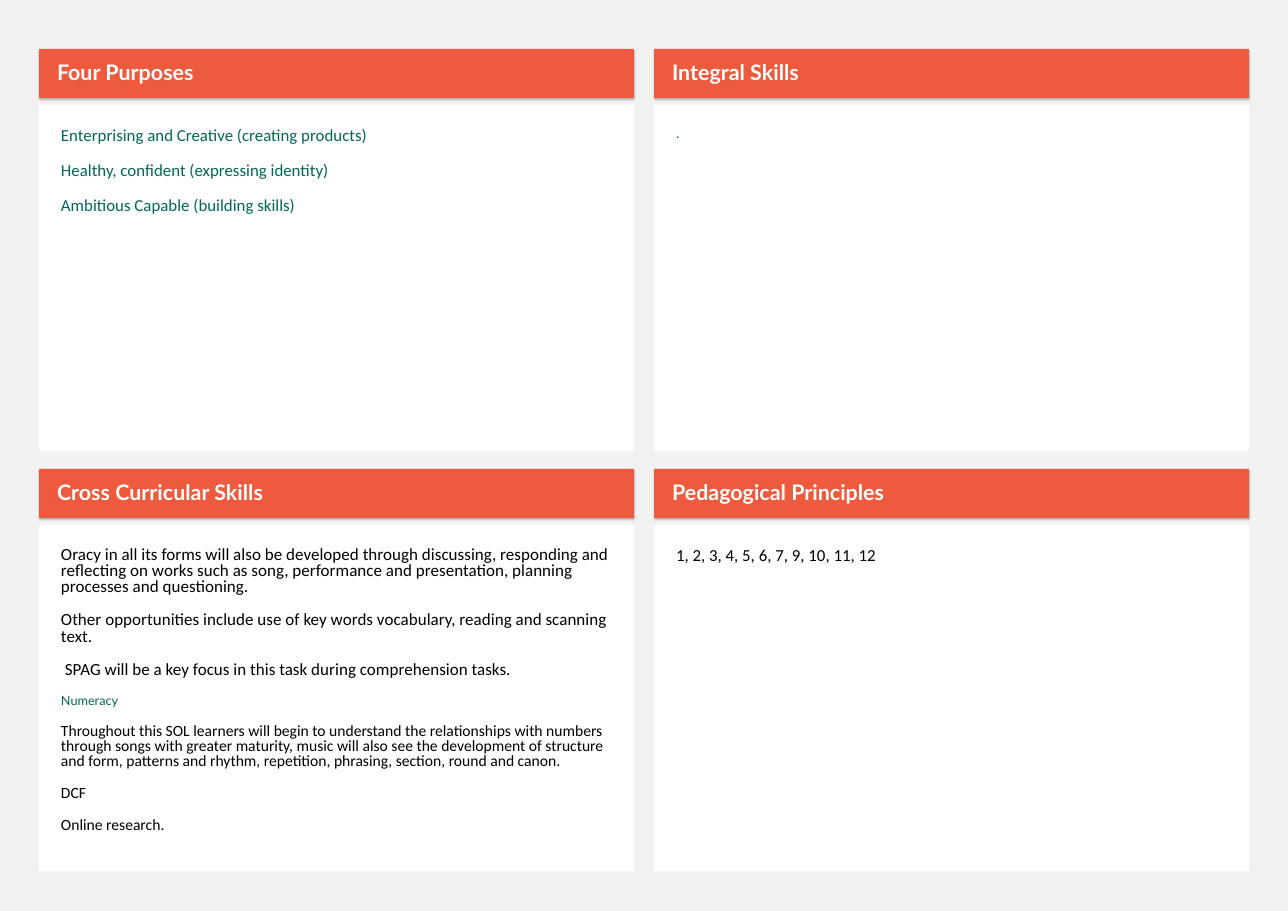
import lxml.etree
import pptx
import pptx.dml.color
import pptx.enum.shapes
import pptx.enum.text
import pptx.oxml
import pptx.oxml.ns
import pptx.util

RGBColor = pptx.dml.color.RGBColor
GREY = RGBColor(0xF2, 0xF2, 0xF2)
ORANGE = RGBColor(0xED, 0x5A, 0x3E)
WHITE = RGBColor(0xFF, 0xFF, 0xFF)
GREEN = RGBColor(0x00, 0x67, 0x58)
BLACK = RGBColor(0x00, 0x00, 0x00)

# Text styles: font, size, colour, bold
HEADING = ("Lato", 14, WHITE, True)
PURPOSE = ("Calibri", 11, GREEN, False)
DOT = ("Lato", 9, GREEN, False)
ORACY = ("Calibri", 11.1, BLACK, False)
SUBJECT = ("Lato", 8.3, GREEN, False)
NUMERACY = ("Calibri", 10.2, BLACK, False)
PRINCIPLE = ("Calibri", 11, BLACK, False)

# Panels, row by row: heading, line spacing, paragraphs
PANELS = [
    ("Four Purposes", 0.9, [
        ("Enterprising and Creative (creating products)", PURPOSE),
        ("Healthy, confident (expressing identity)", PURPOSE),
        ("Ambitious Capable (building skills)", PURPOSE),
    ]),
    ("Integral Skills", 0.9, [(".", DOT)]),
    ("Cross Curricular Skills", 0.8, [
        ("Oracy in all its forms will also be developed through discussing, "
         "responding and reflecting on works such as song, performance and "
         "presentation, planning processes and questioning.", ORACY),
        ("Other opportunities include use of key words vocabulary, reading "
         "and scanning text.", ORACY),
        (" SPAG will be a key focus in this task during comprehension tasks.", ORACY),
        ("Numeracy", SUBJECT),
        ("Throughout this SOL learners will begin to understand the "
         "relationships with numbers through songs with greater maturity, "
         "music will also see the development of structure and form, patterns "
         "and rhythm, repetition, phrasing, section, round and canon.", NUMERACY),
        ("DCF", NUMERACY),
        ("Online research.", NUMERACY),
    ]),
    ("Pedagogical Principles", 0.9, [
        ("1, 2, 3, 4, 5, 6, 7, 9, 10, 11, 12", PRINCIPLE),
    ]),
]

# Layout in px
EMU_PER_PX = 8298
SLIDE_WIDTH, SLIDE_HEIGHT = 1288, 911
LEFT, TOP = 39, 49
COLUMN_STEP, ROW_STEP = 615, 420
PANEL_WIDTH, HEADING_HEIGHT = 595, 49
BODY_OFFSET, BODY_HEIGHT = 56, 346
HEADING_INSETS = (18, 6, 11, 6)
BODY_INSETS = (22, 22, 22, 22)


def px(length):
    return pptx.util.Emu(length * EMU_PER_PX)


def add_block(slide, box, fill, insets, anchor, line_spacing, paragraphs):
    shape = slide.shapes.add_shape(
        pptx.enum.shapes.MSO_SHAPE.RECTANGLE, *map(px, box))
    shape.shadow.inherit = False
    shape.fill.solid()
    shape.fill.fore_color.rgb = fill
    shape.line.fill.background()
    frame = shape.text_frame
    frame.word_wrap = True
    frame.vertical_anchor = anchor
    (frame.margin_left, frame.margin_top,
     frame.margin_right, frame.margin_bottom) = map(px, insets)
    for index, (text, (font, size, color, bold)) in enumerate(paragraphs):
        paragraph = frame.add_paragraph() if index else frame.paragraphs[0]
        paragraph.text = text
        paragraph.alignment = pptx.enum.text.PP_ALIGN.LEFT
        paragraph.line_spacing = line_spacing
        paragraph.space_before = pptx.util.Pt(11)
        paragraph.font.name = font
        paragraph.font.size = pptx.util.Pt(size)
        paragraph.font.color.rgb = color
        paragraph.font.bold = bold
    return shape


def add_soft_shadow(shape):
    effects = shape.element.spPr.find(pptx.oxml.ns.qn("a:effectLst"))
    shadow = lxml.etree.SubElement(
        effects, pptx.oxml.ns.qn("a:outerShdw"),
        blurRad="12700", dist="12700", dir="5400000", rotWithShape="0")
    color = lxml.etree.SubElement(
        shadow, pptx.oxml.ns.qn("a:srgbClr"), val="000000")
    lxml.etree.SubElement(color, pptx.oxml.ns.qn("a:alpha"), val="25000")


def main():
    presentation = pptx.Presentation()
    presentation.slide_width = px(SLIDE_WIDTH)
    presentation.slide_height = px(SLIDE_HEIGHT)
    slide = presentation.slides.add_slide(presentation.slide_layouts[6])
    slide.background.fill.solid()
    slide.background.fill.fore_color.rgb = GREY

    # Two by two grid of heading bars and body boxes
    anchors = pptx.enum.text.MSO_ANCHOR
    for index, (heading, line_spacing, paragraphs) in enumerate(PANELS):
        row, column = divmod(index, 2)
        left = LEFT + column * COLUMN_STEP
        top = TOP + row * ROW_STEP
        add_block(slide, (left, top + BODY_OFFSET, PANEL_WIDTH, BODY_HEIGHT),
                  WHITE, BODY_INSETS, anchors.TOP, line_spacing, paragraphs)
        bar = add_block(slide, (left, top, PANEL_WIDTH, HEADING_HEIGHT),
                        ORANGE, HEADING_INSETS, anchors.MIDDLE, 0.9,
                        [(heading, HEADING)])
        add_soft_shadow(bar)

    presentation.save("out.pptx")


if __name__ == "__main__":
    main()
